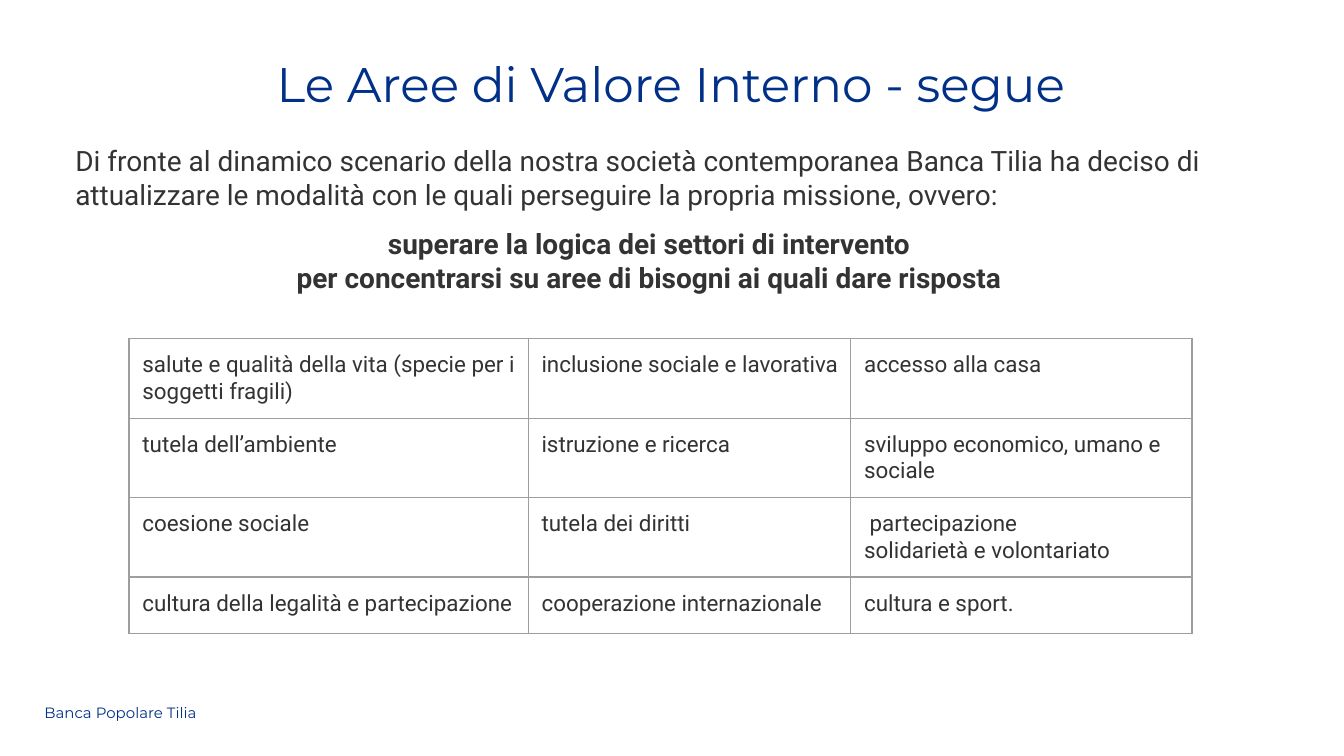
"""Build a slide with a title, an introduction and a table of value areas."""
from lxml.etree import SubElement
from pptx import Presentation
from pptx.dml.color import RGBColor
from pptx.enum.text import MSO_ANCHOR, MSO_AUTO_SIZE, PP_ALIGN
from pptx.oxml.ns import qn
from pptx.util import Inches, Pt

BLUE, GREY, BORDER = "003087", "333333", "9E9E9E"


def write(frame, text, size, font="Roboto", color=GREY, bold=False, align=PP_ALIGN.LEFT, before=0):
    """Add one paragraph, using the first one while it is empty."""
    para = frame.add_paragraph() if frame.text else frame.paragraphs[0]
    para.alignment = align
    para.space_before = Pt(before)
    span = para.add_run()
    span.text = text
    span.font.size = Pt(size)
    span.font.name = font
    span.font.bold = bold
    span.font.color.rgb = RGBColor.from_string(color)


def prepare(box, left, top, width, height, anchor=MSO_ANCHOR.TOP):
    """Place a box and return its text frame with narrow margins."""
    box.left, box.top = Inches(left), Inches(top)
    box.width, box.height = Inches(width), Inches(height)
    frame = box.text_frame
    frame.word_wrap = True
    frame.auto_size = MSO_AUTO_SIZE.NONE
    frame.vertical_anchor = anchor
    frame.margin_left = frame.margin_right = Inches(0.04)
    frame.margin_top = frame.margin_bottom = Inches(0.04)
    return frame


deck = Presentation()
deck.slide_width = Inches(10)
deck.slide_height = Inches(10 * 9 / 16)
page = deck.slides.add_slide(deck.slide_layouts[5])

title = prepare(page.shapes.title, 1.62, 0.36, 6.75, 0.5)
write(title, "Le Aree di Valore Interno - segue", 26, font="Montserrat", color=BLUE, align=PP_ALIGN.CENTER)

intro = prepare(page.shapes.add_textbox(0, 0, 0, 0), 0.52, 1.03, 8.62, 4.08)
write(intro, "Di fronte al dinamico scenario della nostra società contemporanea Banca Tilia ha deciso di "
      "attualizzare le modalità con le quali perseguire la propria missione, ovvero:", 15)
write(intro, "superare la logica dei settori di intervento", 15, bold=True, align=PP_ALIGN.CENTER, before=8.5)
write(intro, "per concentrarsi su aree di bisogni ai quali dare risposta", 15, bold=True, align=PP_ALIGN.CENTER)

footer = prepare(page.shapes.add_textbox(0, 0, 0, 0), 0.29, 5.19, 2.4, 0.22, MSO_ANCHOR.MIDDLE)
write(footer, "Banca Popolare Tilia", 8, font="Montserrat", color=BLUE)

areas = [
    ["salute e qualità della vita (specie per i soggetti fragili)", "inclusione sociale e lavorativa",
     "accesso alla casa"],
    ["tutela dell’ambiente", "istruzione e ricerca", "sviluppo economico, umano e sociale"],
    ["coesione sociale", "tutela dei diritti", " partecipazione\nsolidarietà e volontariato"],
    ["cultura della legalità e partecipazione", "cooperazione internazionale", "cultura e sport."],
]
widths = [2.97, 2.4, 2.54]
heights = [0.59, 0.59, 0.59, 0.42]

table = page.shapes.add_table(len(heights), len(widths), Inches(0.96), Inches(2.52),
                              Inches(sum(widths)), Inches(sum(heights))).table
table.first_row = table.horz_banding = False
for column, width in zip(table.columns, widths):
    column.width = Inches(width)
for row, height, texts in zip(table.rows, heights, areas):
    row.height = Inches(height)
    for cell, text in zip(row.cells, texts):
        cell.margin_left = cell.margin_top = cell.margin_bottom = Inches(0.1)
        cell.margin_right = Inches(0.08)
        for line in text.split("\n"):
            write(cell.text_frame, line, 12)
        properties = cell._tc.get_or_add_tcPr()
        for side in ("lnL", "lnR", "lnT", "lnB"):
            edge = SubElement(properties, qn(f"a:{side}"), w=str(Pt(0.75)))
            SubElement(SubElement(edge, qn("a:solidFill")), qn("a:srgbClr"), val=BORDER)
        cell.fill.background()

deck.save("out.pptx")
